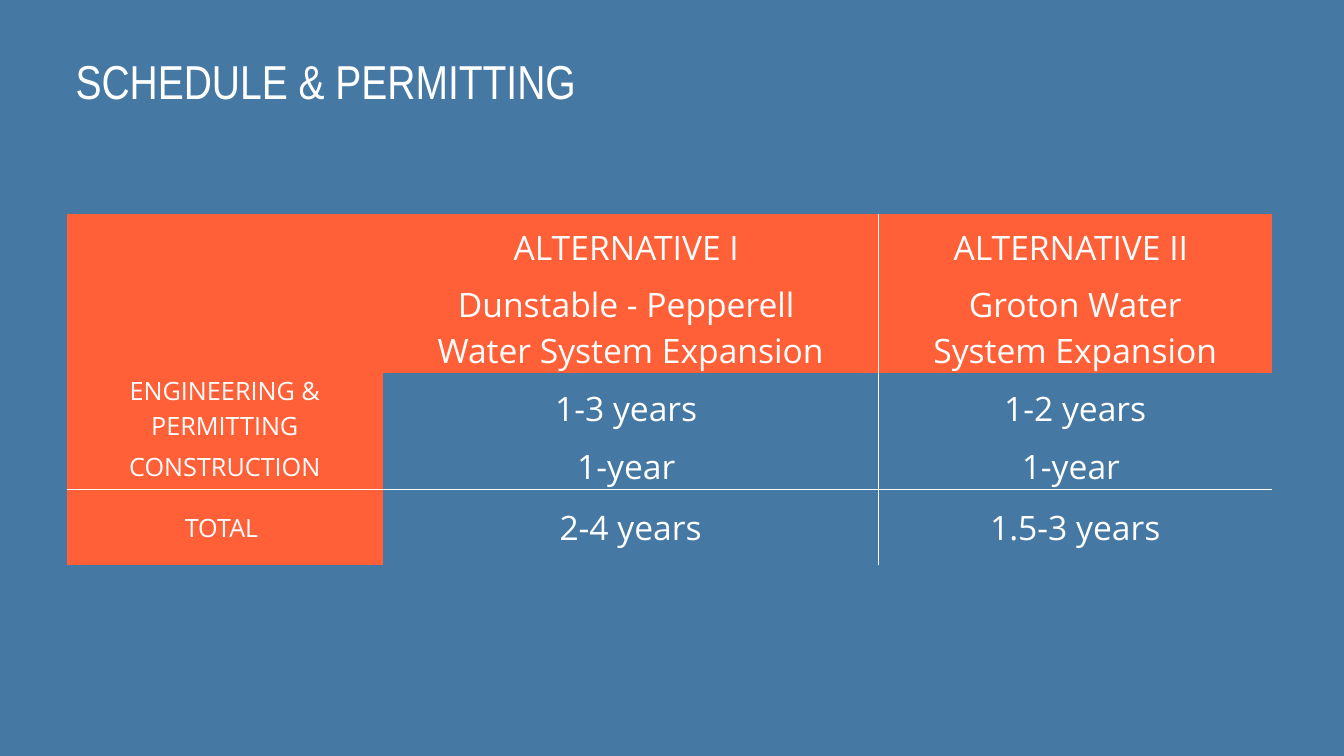
from lxml import etree
from pptx import Presentation
from pptx.dml import color
from pptx.enum import text
from pptx.oxml import ns
from pptx.util import Inches, Pt

BLUE, ORANGE, WHITE = "4678A4", "FF6038", "FFFFFF"
COLUMN_WIDTHS = [3.14, 4.91, 3.91]
ROW_HEIGHTS = [0.66, 0.74, 0.44, 0.44, 0.75]
SCHEDULE = [
    ["", "ALTERNATIVE I ", "ALTERNATIVE II "],
    ["", "Dunstable - Pepperell \nWater System Expansion", "Groton Water\n System Expansion "],
    ["ENGINEERING & PERMITTING", "1-3 years ", "1-2 years"],
    ["CONSTRUCTION", "1-year ", "1-year "],
    ["TOTAL ", "2-4 years", "1.5-3 years"],
]
HEADER_ROWS = 2
TOTAL_ROW = len(SCHEDULE) - 1


def rgb(value):
    """Return the colour for a hex string."""
    return color.RGBColor.from_string(value)


def write_text(frame, content, *, size, font, align, anchor, spacing=None):
    """Write one paragraph per line of content with a shared format."""
    frame.text = content
    frame.word_wrap = True
    frame.vertical_anchor = anchor
    for paragraph in frame.paragraphs:
        paragraph.alignment = align
        paragraph.line_spacing = spacing
        paragraph.font.size = Pt(size)
        paragraph.font.name = font
        paragraph.font.bold = False
        paragraph.font.color.rgb = rgb(WHITE)


def set_borders(cell, visible):
    """Draw white lines on the visible sides and clear the others."""
    properties = cell._tc.get_or_add_tcPr()
    for side in "LRTB":
        line = etree.SubElement(properties, ns.qn(f"a:ln{side}"), w=str(Pt(1)))
        if side in visible:
            fill = etree.SubElement(line, ns.qn("a:solidFill"))
            etree.SubElement(fill, ns.qn("a:srgbClr"), val=WHITE)
        else:
            etree.SubElement(line, ns.qn("a:noFill"))


def border_sides(row, column):
    """Return the sides of a cell that carry a rule."""
    return (["", "R", "L"][column]
            + ("B" if row == TOTAL_ROW - 1 else "")
            + ("T" if row == TOTAL_ROW else ""))


def format_cell(cell, content, row, column):
    """Fill, rule and label one schedule cell."""
    set_borders(cell, border_sides(row, column))
    if row < HEADER_ROWS or column == 0:
        cell.fill.solid()
        cell.fill.fore_color.rgb = rgb(ORANGE)
    else:
        cell.fill.background()
    cell.margin_left = cell.margin_right = cell.margin_top = Inches(0.01)
    cell.margin_bottom = 0
    write_text(cell.text_frame, content, size=24 if column else 18, font="Open Sans",
               align=text.PP_ALIGN.CENTER, anchor=None)
    cell.vertical_anchor = text.MSO_ANCHOR.MIDDLE


def add_title(slide, content):
    """Place and format the slide title."""
    title = slide.shapes.title
    title.left, title.top = Inches(0.65), Inches(0.04)
    title.width, title.height = Inches(12.03), Inches(1.1)
    write_text(title.text_frame, content, size=34, font="Arial Narrow",
               align=text.PP_ALIGN.LEFT, anchor=text.MSO_ANCHOR.BOTTOM, spacing=0.9)
    title.text_frame.auto_size = text.MSO_AUTO_SIZE.NONE


def add_schedule(slide):
    """Add the table that compares the two alternatives."""
    table = slide.shapes.add_table(
        len(ROW_HEIGHTS), len(COLUMN_WIDTHS), Inches(0.66), Inches(2.12),
        Inches(sum(COLUMN_WIDTHS)), Inches(sum(ROW_HEIGHTS))).table
    table.first_row = table.horz_banding = False
    for column, width in zip(table.columns, COLUMN_WIDTHS):
        column.width = Inches(width)
    for row, height in zip(table.rows, ROW_HEIGHTS):
        row.height = Inches(height)
    for row, labels in enumerate(SCHEDULE):
        for column, label in enumerate(labels):
            format_cell(table.cell(row, column), label, row, column)


def main():
    """Build and save the presentation."""
    presentation = Presentation()
    presentation.slide_width, presentation.slide_height = Inches(13.33), Inches(7.5)
    slide = presentation.slides.add_slide(presentation.slide_layouts[0])
    subtitle = slide.placeholders[1].element
    subtitle.getparent().remove(subtitle)
    slide.background.fill.solid()
    slide.background.fill.fore_color.rgb = rgb(BLUE)
    add_title(slide, "SCHEDULE & PERMITTING")
    add_schedule(slide)
    presentation.save("out.pptx")


if __name__ == "__main__":
    main()
